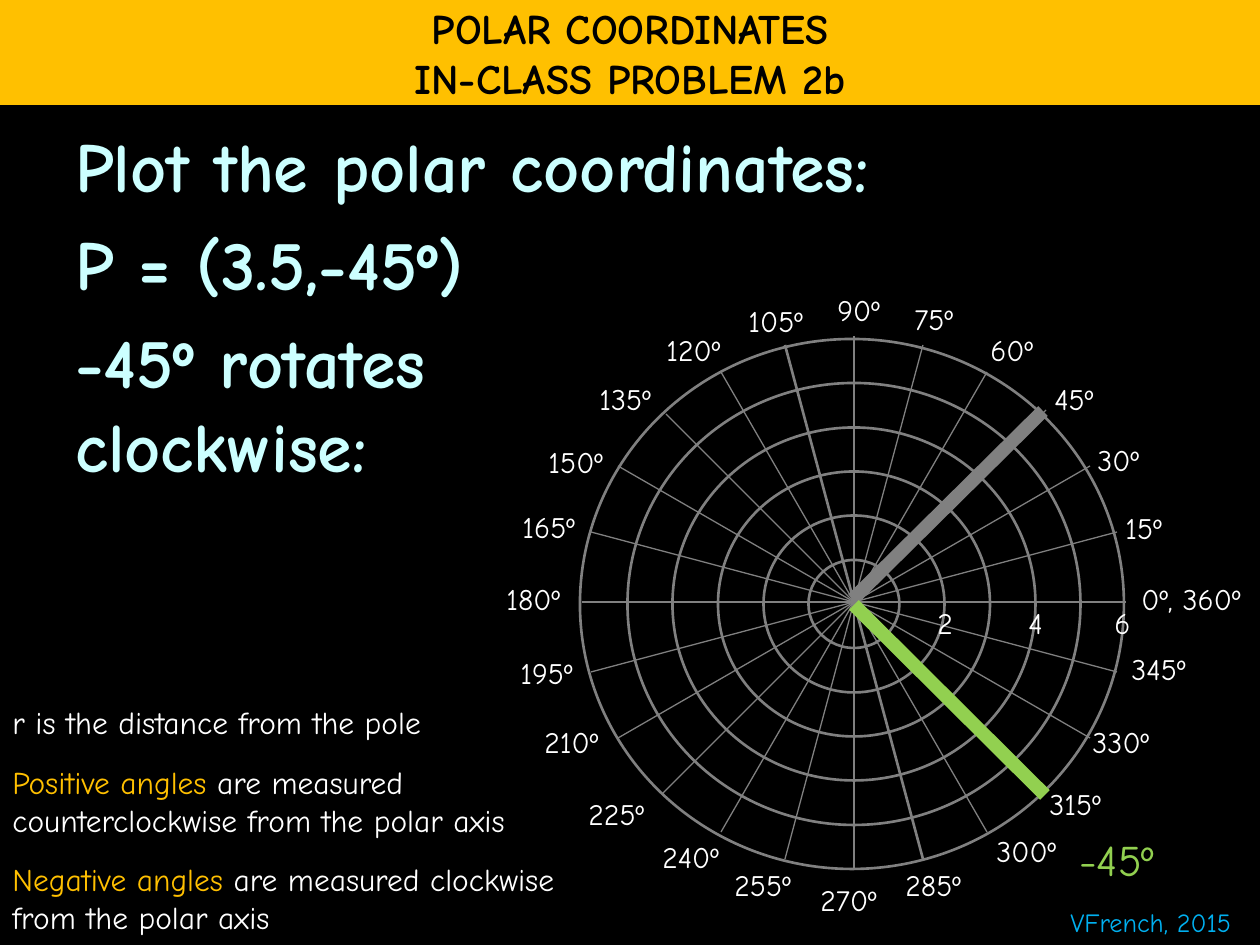
from dataclasses import dataclass
from math import cos, radians, sin
from typing import NamedTuple

from lxml.etree import SubElement
from pptx import Presentation
from pptx.dml.color import RGBColor
from pptx.enum.shapes import MSO_CONNECTOR as Connector, MSO_SHAPE as Preset
from pptx.enum.text import MSO_ANCHOR as Anchor, MSO_AUTO_SIZE as AutoSize, PP_ALIGN as Align
from pptx.oxml.ns import qn
from pptx.util import Emu, Pt

EMU_PER_PX = 914400 / 126
FONT = "Comic Neue"
BLACK = RGBColor(0x00, 0x00, 0x00)
WHITE = RGBColor(0xFF, 0xFF, 0xFF)
GOLD = RGBColor(0xFF, 0xC0, 0x00)
PALE_CYAN = RGBColor(0xCC, 0xFF, 0xFF)
GRAY = RGBColor(0x80, 0x80, 0x80)
GREEN = RGBColor(0x92, 0xD0, 0x50)
BLUE = RGBColor(0x00, 0xB0, 0xF0)

CENTER_X = 854
SPOKE_CENTER_Y = 602
RING_CENTER_Y = 604
RING_COUNT = 6
OUTER_WIDTH, OUTER_HEIGHT = 544, 530
LONG_SPOKE, SHORT_SPOKE = 272, 266
LABEL_HEIGHT = 49


class Label(NamedTuple):
    text: str
    left: int
    top: int
    width: int


class Run(NamedTuple):
    text: str
    color: RGBColor


@dataclass
class Line:
    runs: list[Run]
    space_before: float = 0


LABELS = [
    Label("15º", 1113, 504, 71), Label("0º, 360º", 1129, 575, 144),
    Label("30º", 1085, 436, 76), Label("45º", 1042, 375, 76),
    Label("60º", 978, 326, 76), Label("75º", 902, 295, 76),
    Label("90º", 825, 286, 76), Label("105º", 736, 297, 89),
    Label("120º", 654, 326, 89), Label("135º", 587, 375, 89),
    Label("150º", 536, 438, 89), Label("165º", 510, 503, 89),
    Label("180º", 494, 575, 89), Label("195º", 508, 649, 89),
    Label("210º", 532, 718, 89), Label("225º", 576, 790, 95),
    Label("240º", 650, 833, 95), Label("255º", 722, 861, 95),
    Label("270º", 808, 876, 95), Label("285º", 893, 861, 95),
    Label("300º", 984, 827, 95), Label("315º", 1037, 780, 89),
    Label("330º", 1080, 718, 95), Label("345º", 1119, 645, 95),
    Label("2", 925, 599, 44), Label("4", 1016, 599, 44), Label("6", 1102, 599, 44),
]


def px(length: float) -> Emu:
    """Turn pixels into EMU."""
    return Emu(round(length * EMU_PER_PX))


def write_text(frame, lines: list[Line], *, size: float, bold: bool = False,
               align: Align = Align.LEFT, wrap: bool = True,
               auto_size: AutoSize = AutoSize.NONE, anchor: Anchor = Anchor.TOP) -> None:
    """Fill a text frame with formatted lines."""
    frame.word_wrap = wrap
    frame.auto_size = auto_size
    frame.vertical_anchor = anchor
    for index, line in enumerate(lines):
        paragraph = frame.add_paragraph() if index else frame.paragraphs[0]
        paragraph.alignment = align
        paragraph.space_before = Pt(line.space_before)
        for text, color in line.runs:
            run = paragraph.add_run()
            run.text = text
            run.font.name = FONT
            run.font.size = Pt(size)
            run.font.bold = bold
            run.font.color.rgb = color


def add_label(shapes, label: Label, *, height: int = LABEL_HEIGHT,
              size: float = 17, color: RGBColor = WHITE) -> None:
    """Add a one-line label that fits its text."""
    box = shapes.add_textbox(px(label.left), px(label.top), px(label.width), px(height))
    write_text(box.text_frame, [Line([Run(label.text, color)])], size=size,
               wrap=False, auto_size=AutoSize.SHAPE_TO_FIT_TEXT)


def add_line(shapes, start: tuple[int, int], end: tuple[int, int],
             color: RGBColor, width: float) -> None:
    """Add a straight line without a shadow."""
    connector = shapes.add_connector(Connector.STRAIGHT, *map(px, start + end))
    connector.line.color.rgb = color
    connector.line.width = Pt(width)
    SubElement(connector._element.spPr, qn("a:effectLst"))


def add_ring(shapes, number: int) -> None:
    """Add one ring of the polar grid, counted from the pole."""
    width = round(OUTER_WIDTH * number / RING_COUNT)
    height = round(OUTER_HEIGHT * number / RING_COUNT)
    center_x = CENTER_X - 2 if number == RING_COUNT else CENTER_X
    ring = shapes.add_shape(Preset.OVAL, px(center_x - width / 2),
                            px(RING_CENTER_Y - height / 2), px(width), px(height))
    ring.shadow.inherit = False
    ring.fill.background()
    ring.line.color.rgb = GRAY
    ring.line.width = Pt(1.5)


def add_spoke(shapes, angle: int) -> None:
    """Add a line through the pole at an angle in degrees."""
    radius = SHORT_SPOKE if 60 <= angle <= 135 else LONG_SPOKE
    across = round(radius * cos(radians(angle)))
    up = round(radius * sin(radians(angle)))
    add_line(shapes, (CENTER_X - across, SPOKE_CENTER_Y + up),
             (CENTER_X + across, SPOKE_CENTER_Y - up), GRAY, 1.5 if angle == 105 else 0.75)


def add_polar_grid(slide) -> None:
    """Add the labelled polar grid as one group."""
    shapes = slide.shapes.add_group_shape().shapes
    for angle in range(0, 180, 15):
        add_spoke(shapes, angle)
    for number in range(RING_COUNT, 0, -1):
        add_ring(shapes, number)
    for label in LABELS:
        add_label(shapes, label)


def add_title(slide) -> None:
    """Turn the title placeholder into the band at the top."""
    title = slide.shapes.title
    title.left, title.top, title.width, title.height = px(0), px(0), px(1260), px(105)
    title.fill.solid()
    title.fill.fore_color.rgb = GOLD
    lines = [Line([Run(text, BLACK)]) for text in ("POLAR COORDINATES", "IN-CLASS PROBLEM 2b")]
    write_text(title.text_frame, lines, size=24, bold=True, align=Align.CENTER,
               wrap=False, anchor=Anchor.MIDDLE)


def add_problem(slide) -> None:
    """Add the problem statement."""
    box = slide.shapes.add_textbox(px(63), px(116), px(1197), px(777))
    lines = [Line([Run(text, PALE_CYAN)], 8) for text in
             ("Plot the polar coordinates:", "P = (3.5,-45º)", "-45º rotates")]
    lines.append(Line([Run("clockwise:", PALE_CYAN)]))
    write_text(box.text_frame, lines, size=40, bold=True)


def add_notes(slide) -> None:
    """Add the explanation of distance and angles."""
    box = slide.shapes.add_textbox(px(0), px(697), px(635), px(248))
    lines = [
        Line([Run("r is the distance from the pole", WHITE)]),
        Line([Run("Positive angles", GOLD),
              Run(" are measured counterclockwise from the polar axis", WHITE)], 12.5),
        Line([Run("Negative angles", GOLD),
              Run(" are measured clockwise from the polar axis", WHITE)], 12.5),
    ]
    write_text(box.text_frame, lines, size=18, auto_size=AutoSize.SHAPE_TO_FIT_TEXT)


def main() -> None:
    """Build the slide and save it."""
    presentation = Presentation()
    presentation.slide_width, presentation.slide_height = px(1260), px(945)
    slide = presentation.slides.add_slide(presentation.slide_layouts[5])
    slide.background.fill.solid()
    slide.background.fill.fore_color.rgb = BLACK
    add_problem(slide)
    add_title(slide)
    add_label(slide.shapes, Label("VFrench, 2015", 1058, 900, 213),
              height=44, size=15, color=BLUE)
    add_notes(slide)
    add_polar_grid(slide)
    add_line(slide.shapes, (853, 599), (1043, 411), GRAY, 7.75)
    add_label(slide.shapes, Label("-45º", 1067, 827, 117), height=66, size=25, color=GREEN)
    add_line(slide.shapes, (854, 605), (1045, 795), GREEN, 7.75)
    presentation.save("out.pptx")


if __name__ == "__main__":
    main()
